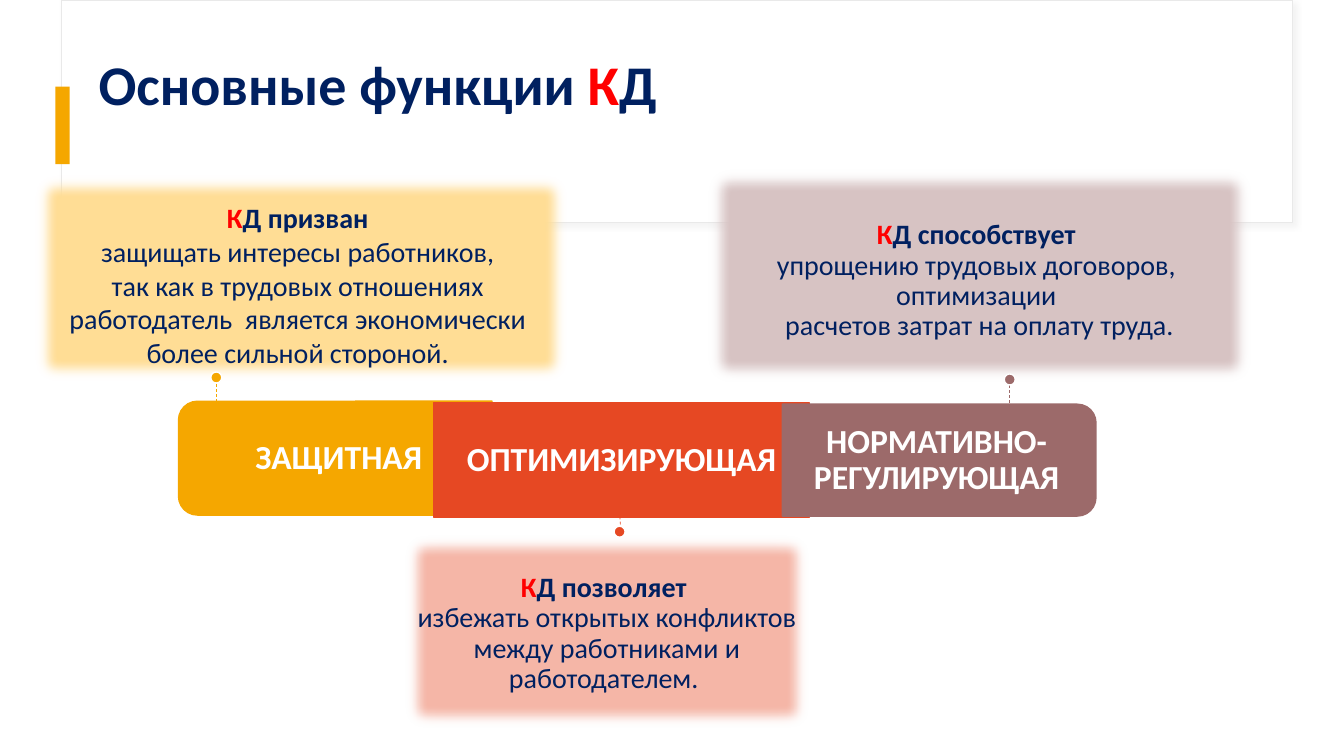
from lxml.etree import SubElement
from pptx import Presentation
from pptx.dml.color import RGBColor
from pptx.enum.dml import MSO_LINE
from pptx.enum.shapes import MSO_CONNECTOR, MSO_SHAPE
from pptx.enum.text import MSO_ANCHOR, PP_ALIGN
from pptx.oxml.ns import qn
from pptx.util import Inches, Pt

NAVY, RED, WHITE = "002060", "FF0000", "FFFFFF"
YELLOW, ORANGE, MAUVE = "F5A700", "E64823", "9C6A6A"

presentation = Presentation()
presentation.slide_width = Inches(13.33)
presentation.slide_height = Inches(7.5)
slide = presentation.slides.add_slide(presentation.slide_layouts[6])


def add_box(kind, box, fill, line=None, line_width=1):
    shape = slide.shapes.add_shape(kind, *map(Inches, box))
    shape.shadow.inherit = False
    shape.fill.solid()
    shape.fill.fore_color.rgb = RGBColor.from_string(fill)
    if line:
        shape.line.color.rgb = RGBColor.from_string(line)
        shape.line.width = Pt(line_width)
    else:
        shape.line.fill.background()
    return shape


def add_text(box, paragraphs, size, anchor, insets, spacing=0.9, align=PP_ALIGN.CENTER):
    frame = slide.shapes.add_textbox(*map(Inches, box)).text_frame
    frame.word_wrap = True
    frame.vertical_anchor = anchor
    frame.margin_left, frame.margin_top, frame.margin_right, frame.margin_bottom = map(Inches, insets)
    for index, (bold, runs) in enumerate(paragraphs):
        paragraph = frame.paragraphs[0] if index == 0 else frame.add_paragraph()
        paragraph.alignment = align
        paragraph.line_spacing = spacing
        paragraph.font.name = "Calibri"
        paragraph.font.size = Pt(size)
        paragraph.font.bold = bold
        for text, color in runs:
            run = paragraph.add_run()
            run.text = text
            run.font.color.rgb = RGBColor.from_string(color)


header = add_box(MSO_SHAPE.RECTANGLE, (0.61, 0, 12.21, 2.21), WHITE, "E9E9E9", 0.75)
effects = header._element.spPr.find(qn("a:effectLst"))
shadow = SubElement(effects, qn("a:outerShdw"), blurRad=str(Pt(4)), dist=str(Pt(3)), dir="2700000")
shadow_color = SubElement(shadow, qn("a:srgbClr"), val="D9D9D9")
SubElement(shadow_color, qn("a:alpha"), val="30000")
add_box(MSO_SHAPE.RECTANGLE, (0.55, 0.86, 0.14, 0.77), YELLOW)
add_text((0.88, 0.22, 11.12, 1.29),
         [(True, [("Основные функции ", NAVY), ("К", RED), ("Д", NAVY)])],
         40, MSO_ANCHOR.MIDDLE, (0.1, 0.05, 0.1, 0.05), align=PP_ALIGN.LEFT)

functions = [
    {"color": YELLOW, "tint": "FFDD95", "name": "ЗАЩИТНАЯ",
     "band": (MSO_SHAPE.ROUND_2_SAME_RECTANGLE, (2.76, 2.99, 1.13, 3.11), 270),
     "label": (1.83, 4.04, 3.06, 1.02),
     "card": (0.3, 1.69, 5.37, 2.14), "anchor": MSO_ANCHOR.BOTTOM,
     "insets": (0, 0, 0, 0.17), "spacing": 1.0, "verb": "призван ",
     "lines": ["защищать интересы работников, ", "так как в трудовых отношениях ",
               "работодатель  является экономически ", "более сильной стороной. "],
     "pin": (2.15, 3.76, 2.15, 4.2), "dot": (2.09, 3.69)},
    {"color": ORANGE, "tint": "F5B6A7", "name": "ОПТИМИЗИРУЮЩАЯ",
     "band": (MSO_SHAPE.RECTANGLE, (4.3, 4, 3.73, 1.13), 0),
     "label": (4.3, 4, 3.73, 1.13),
     "card": (3.97, 5.26, 4.1, 2.01), "anchor": MSO_ANCHOR.TOP,
     "insets": (0, 0.43, 0, 0), "spacing": 0.9, "verb": "позволяет ",
     "lines": ["избежать открытых конфликтов между работниками и работодателем. "],
     "pin": (6.11, 4.68, 6.16, 5.28), "dot": (6.09, 5.22)},
    {"color": MAUVE, "tint": "D7C3C3", "name": "НОРМАТИВНО- РЕГУЛИРУЮЩАЯ",
     "band": (MSO_SHAPE.ROUND_2_SAME_RECTANGLE, (8.76, 3.01, 1.11, 3.11), 90),
     "label": (7.76, 4.07, 3.06, 1),
     "card": (6.98, 1.63, 5.47, 2.21), "anchor": MSO_ANCHOR.BOTTOM,
     "insets": (0, 0, 0, 0.45), "spacing": 0.9, "verb": "способствует ",
     "lines": ["упрощению трудовых договоров, ", "оптимизации ",
               "расчетов затрат на оплату труда."],
     "pin": (10.01, 3.82, 10.01, 4.27), "dot": (9.96, 3.71)},
]

for function in functions:
    color = function["color"]
    kind, box, rotation = function["band"]
    band = add_box(kind, box, color, color)
    band.rotation = rotation
    add_text(function["label"], [(True, [(function["name"], WHITE)])],
             24, MSO_ANCHOR.MIDDLE, [0.2] * 4)

    card = add_box(MSO_SHAPE.RECTANGLE, function["card"], function["tint"])
    SubElement(card._element.spPr.find(qn("a:effectLst")), qn("a:softEdge"), rad=str(Pt(10)))
    heading = (True, [("К", RED), ("Д " + function["verb"], NAVY)])
    body = [(False, [(line, NAVY)]) for line in function["lines"]]
    add_text(function["card"], [heading] + body, 20,
             function["anchor"], function["insets"], function["spacing"])

    pin = slide.shapes.add_connector(MSO_CONNECTOR.STRAIGHT, *map(Inches, function["pin"]))
    pin.line.color.rgb = RGBColor.from_string(color)
    pin.line.width = Pt(0.5)
    pin.line.dash_style = MSO_LINE.DASH
    SubElement(pin._element.spPr, qn("a:effectLst"))
    add_box(MSO_SHAPE.OVAL, (*function["dot"], 0.11, 0.11), color, WHITE)

presentation.save("out.pptx")
